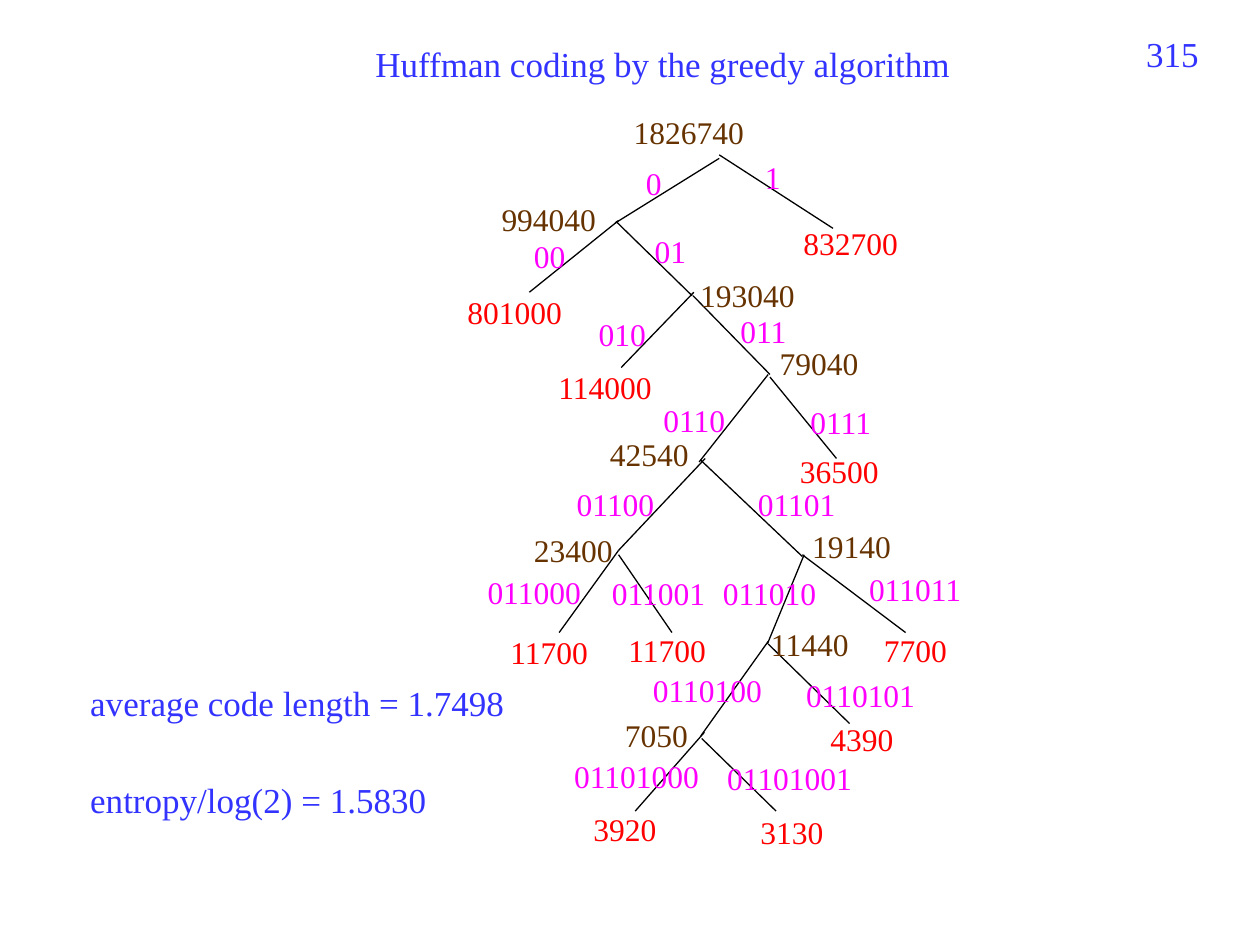
import dataclasses

import pptx
import pptx.dml.color
import pptx.enum.shapes
import pptx.enum.text
import pptx.oxml.ns
import pptx.util
from lxml import etree

Pt = pptx.util.Pt
Align = pptx.enum.text.PP_ALIGN
AutoSize = pptx.enum.text.MSO_AUTO_SIZE


def rgb(value):
    return pptx.dml.color.RGBColor.from_string(value)


@dataclasses.dataclass(frozen=True)
class Theme:
    font: str = "Times New Roman"
    heading_size: float = 20
    label_size: float = 18
    edge_width: float = 0.75
    heading: str = "3333FF"
    inner: str = "663300"
    leaf: str = "FF0000"
    code: str = "FF00FF"
    edge: str = "000000"


@dataclasses.dataclass(frozen=True)
class Node:
    weight: int
    weight_at: tuple
    code_at: tuple
    edge_start: tuple
    edge_end: tuple


ROOT_WEIGHT, ROOT_AT = 1826740, (355, 61)

TREE = {
    "0": Node(994040, (279.5, 111), (362, 90), (411, 90.5), (351.5, 127.5)),
    "1": Node(832700, (452, 124.5), (430, 87), (411, 88.5), (476, 130.5)),
    "00": Node(801000, (260, 164), (298, 132), (353.5, 126), (302.5, 167)),
    "01": Node(193040, (393, 154), (367, 129), (352, 126.5), (395.5, 169)),
    "010": Node(114000, (312, 206.5), (335, 176.5), (396.5, 167), (355, 210)),
    "011": Node(79040, (438.5, 193), (416, 175), (396, 169), (440, 214)),
    "0110": Node(42540, (341.5, 245), (372, 225.5), (439, 214), (399.5, 264)),
    "0111": Node(36500, (450, 255), (456, 227), (440, 215.5), (478, 262)),
    "01100": Node(23400, (298, 300), (322.5, 273.5), (403, 262), (353.5, 314.5)),
    "01101": Node(19140, (457, 297.5), (426, 273.5), (400.5, 263), (458.5, 318)),
    "011000": Node(11700, (284.5, 358), (271.5, 324), (353.5, 314.5), (319.5, 361.5)),
    "011001": Node(11700, (352, 357), (342.5, 324.5), (353.5, 317), (384, 361.5)),
    "011010": Node(11440, (433.5, 353.5), (406, 324.5), (459.5, 317), (438.5, 368)),
    "011011": Node(7700, (498, 357), (489.5, 322), (458.5, 317), (517.5, 361.5)),
    "0110100": Node(7050, (350, 405.5), (366, 380), (439, 366.5), (400.5, 420.5)),
    "0110101": Node(4390, (467.5, 408), (453.5, 383), (439, 368), (485.5, 413.5)),
    "01101000": Node(3920, (332, 459.5), (321, 429), (402.5, 418.5), (363, 463.5)),
    "01101001": Node(3130, (427.5, 461), (408.5, 430), (401, 422), (443.5, 463.5)),
}


def write(frame, text, *, font, size, color, align=Align.LEFT):
    paragraph = frame.paragraphs[0]
    paragraph.alignment = align
    run = paragraph.add_run()
    run.text = text
    run.font.name = font
    run.font.size = Pt(size)
    run.font.color.rgb = rgb(color)


class HuffmanSlide:
    def __init__(self, slide, theme):
        self.slide = slide
        self.theme = theme

    def textbox(self, left, top, width, height, wrap=True, grow=True):
        box = self.slide.shapes.add_textbox(Pt(left), Pt(top), Pt(width), Pt(height))
        frame = box.text_frame
        frame.word_wrap = wrap
        frame.auto_size = AutoSize.SHAPE_TO_FIT_TEXT if grow else AutoSize.NONE
        return frame

    def heading(self, text, left, top, width, height, align=Align.LEFT, grow=True):
        frame = self.textbox(left, top, width, height, grow=grow)
        write(frame, text, font=self.theme.font, size=self.theme.heading_size,
              color=self.theme.heading, align=align)

    def label(self, text, at, color):
        digit_width, margins = 9, 14.4
        frame = self.textbox(*at, margins + digit_width * len(text), 29, wrap=False)
        write(frame, text, font=self.theme.font, size=self.theme.label_size, color=color)

    def edge(self, start, end):
        branch = self.slide.shapes.add_connector(
            pptx.enum.shapes.MSO_CONNECTOR.STRAIGHT, *map(Pt, start + end))
        branch.line.color.rgb = rgb(self.theme.edge)
        branch.line.width = Pt(self.theme.edge_width)
        properties = branch._element.find(pptx.oxml.ns.qn("p:spPr"))
        etree.SubElement(properties, pptx.oxml.ns.qn("a:effectLst"))

    def tree(self, nodes):
        for node in nodes.values():
            self.edge(node.edge_start, node.edge_end)
        self.label(str(ROOT_WEIGHT), ROOT_AT, self.theme.inner)
        for code, node in nodes.items():
            color = self.theme.inner if code + "0" in nodes else self.theme.leaf
            self.label(str(node.weight), node.weight_at, color)
            self.label(code, node.code_at, self.theme.code)


def main():
    deck = pptx.Presentation()
    deck.slide_width, deck.slide_height = Pt(720), Pt(540)
    page = HuffmanSlide(deck.slides.add_slide(deck.slide_layouts[6]), Theme())
    page.heading("315", 524, 15, 168, 37.5, align=Align.RIGHT, grow=False)
    page.heading("Huffman coding by the greedy algorithm", 198, 20.5, 361.5, 31,
                 align=Align.CENTER)
    page.tree(TREE)
    page.heading("average code length = 1.7498", 44.5, 386, 266.5, 31)
    page.heading("entropy/log(2) = 1.5830", 44.5, 441.5, 266.5, 31)
    deck.save("out.pptx")


if __name__ == "__main__":
    main()
